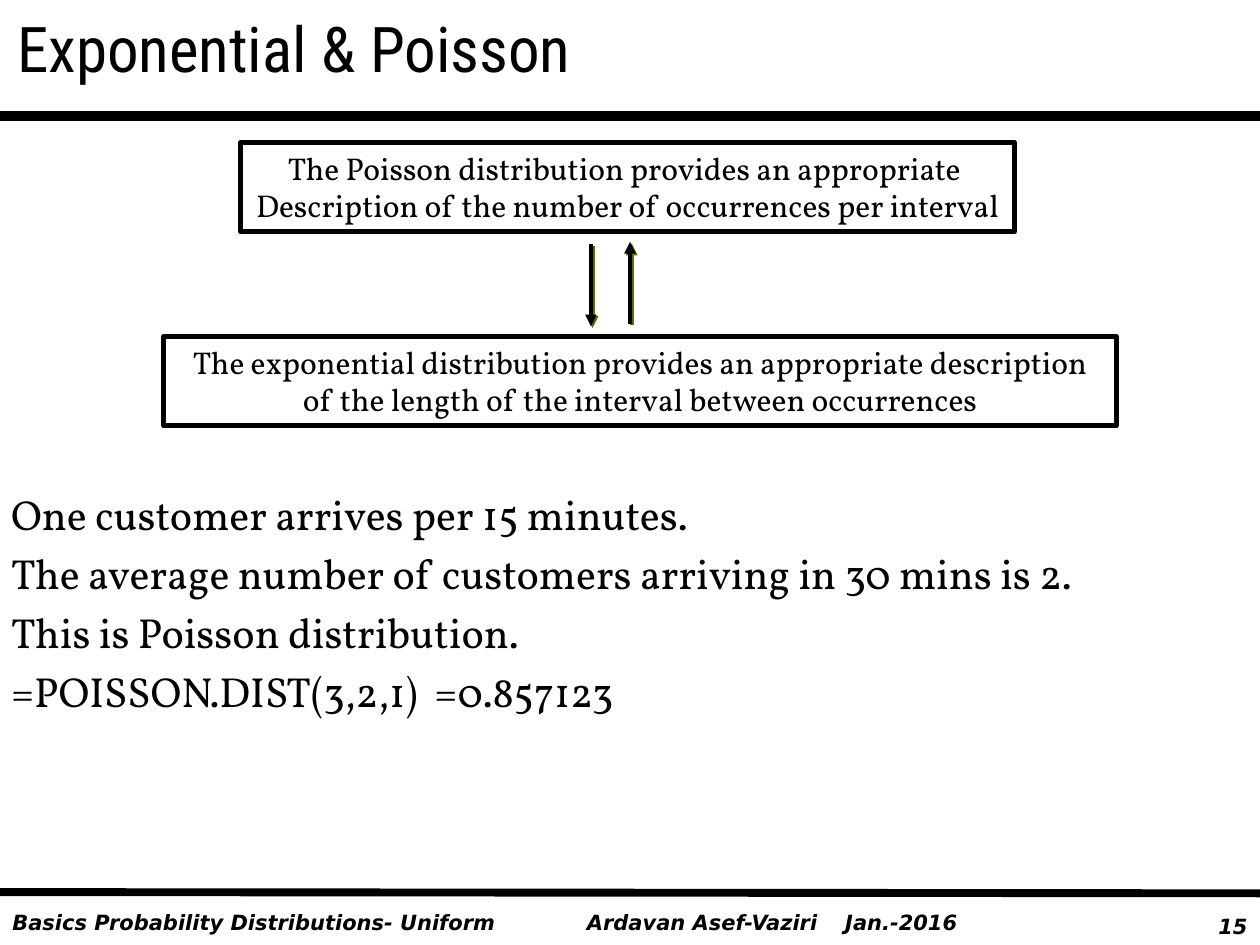
"""Build the slide relating the exponential and Poisson distributions."""
import pptx
import pptx.dml.color
import pptx.enum.shapes
import pptx.enum.text
import pptx.oxml
import pptx.oxml.ns
import pptx.util
from pptx.util import Inches

COLORS = {"ink": "000000", "shadow": "666600"}
FONTS = {"title": "Roboto Condensed", "body": "Vollkorn", "footer": "DejaVu Sans"}
ALIGN = pptx.enum.text.PP_ALIGN
ANCHOR = pptx.enum.text.MSO_ANCHOR


def color(name):
    return pptx.dml.color.RGBColor.from_string(COLORS[name])


def xml(markup):
    namespace = pptx.oxml.ns.nsdecls("a")
    return pptx.oxml.parse_xml(markup.replace(">", f" {namespace}>", 1))


def write(shape, lines, font, size, align=ALIGN.LEFT, anchor=ANCHOR.TOP, space=0, strong=False):
    frame = shape.text_frame
    frame.word_wrap = True
    frame.vertical_anchor = anchor
    for index, line in enumerate(lines):
        paragraph = frame.add_paragraph() if index else frame.paragraphs[0]
        paragraph.alignment = align
        paragraph.space_before = pptx.util.Pt(space)
        run = paragraph.add_run()
        run.text = line
        run.font.name = FONTS[font]
        run.font.size = pptx.util.Pt(size)
        run.font.bold = run.font.italic = strong
        run.font.color.rgb = color("ink")


def add_text(slide, box, lines, font, size, **style):
    shape = slide.shapes.add_textbox(*map(Inches, box))
    write(shape, lines, font, size, **style)
    return shape


def add_footer(slide, box, text, align=ALIGN.LEFT):
    return add_text(slide, box, [text], "footer", 12, align=align, strong=True)


def add_statement(slide, box, lines):
    shape = slide.shapes.add_shape(pptx.enum.shapes.MSO_SHAPE.RECTANGLE, *map(Inches, box))
    shape.shadow.inherit = False
    shape.fill.background()
    shape.line.color.rgb = color("ink")
    shape.line.width = pptx.util.Pt(3)
    write(shape, lines, "body", 18, align=ALIGN.CENTER)


def add_line(slide, start, end, width):
    line = slide.shapes.add_connector(
        pptx.enum.shapes.MSO_CONNECTOR.STRAIGHT, *map(Inches, start + end))
    line.line.color.rgb = color("ink")
    line.line.width = pptx.util.Pt(width)
    effects = xml("<a:effectLst></a:effectLst>")
    line._element.spPr.append(effects)
    return line, effects


def add_arrow(slide, start, end):
    arrow, effects = add_line(slide, start, end, 2.25)
    arrow.line._get_or_add_ln().append(xml('<a:tailEnd type="triangle"></a:tailEnd>'))
    effects.append(xml(
        '<a:outerShdw dist="17780" dir="2700000">'
        f'<a:srgbClr val="{COLORS["shadow"]}"/></a:outerShdw>'))


def set_tab(shape, position):
    properties = shape.text_frame.paragraphs[0]._p.get_or_add_pPr()
    properties.append(xml(
        f'<a:tabLst><a:tab pos="{Inches(position)}" algn="l"/></a:tabLst>'))


def main():
    presentation = pptx.Presentation()
    presentation.slide_width, presentation.slide_height = Inches(10), Inches(7.5)
    slide = presentation.slides.add_slide(presentation.slide_layouts[6])

    add_footer(slide, (9.25, 7.2, 0.75, 0.3), "15", ALIGN.RIGHT)
    author = add_footer(slide, (4.56, 7.17, 3.35, 0.3), "Ardavan Asef-Vaziri\tJan.-2016")
    set_tab(author, 2.05)
    add_footer(slide, (0, 7.17, 4.67, 0.3), "Basics Probability Distributions- Uniform")
    add_line(slide, (0, 0.92), (10, 0.92), 6)
    add_line(slide, (0, 7.08), (10, 7.09), 4.5)

    add_arrow(slide, (4.69, 1.94), (4.69, 2.59))
    add_arrow(slide, (5, 2.57), (5, 1.92))
    add_text(slide, (-0.01, 3.83, 9.58, 2.41), [
        "One customer arrives per 15 minutes.",
        "The average number of customers arriving in 30 mins is 2.",
        "This is Poisson distribution.",
        "=POISSON.DIST(3,2,1)  =0.857123",
    ], "body", 24, space=4.8)
    add_statement(slide, (1.91, 1.13, 6.14, 0.71), [
        "The Poisson distribution provides an appropriate ",
        "Description of the number of occurrences per interval",
    ])
    add_statement(slide, (1.3, 2.67, 7.56, 0.71), [
        "The exponential distribution provides an appropriate description "
        "of the length of the interval between occurrences",
    ])
    add_text(slide, (0.04, 0, 9.96, 0.75), ["Exponential & Poisson"], "title", 36,
             anchor=ANCHOR.MIDDLE)
    presentation.save("out.pptx")


if __name__ == "__main__":
    main()
